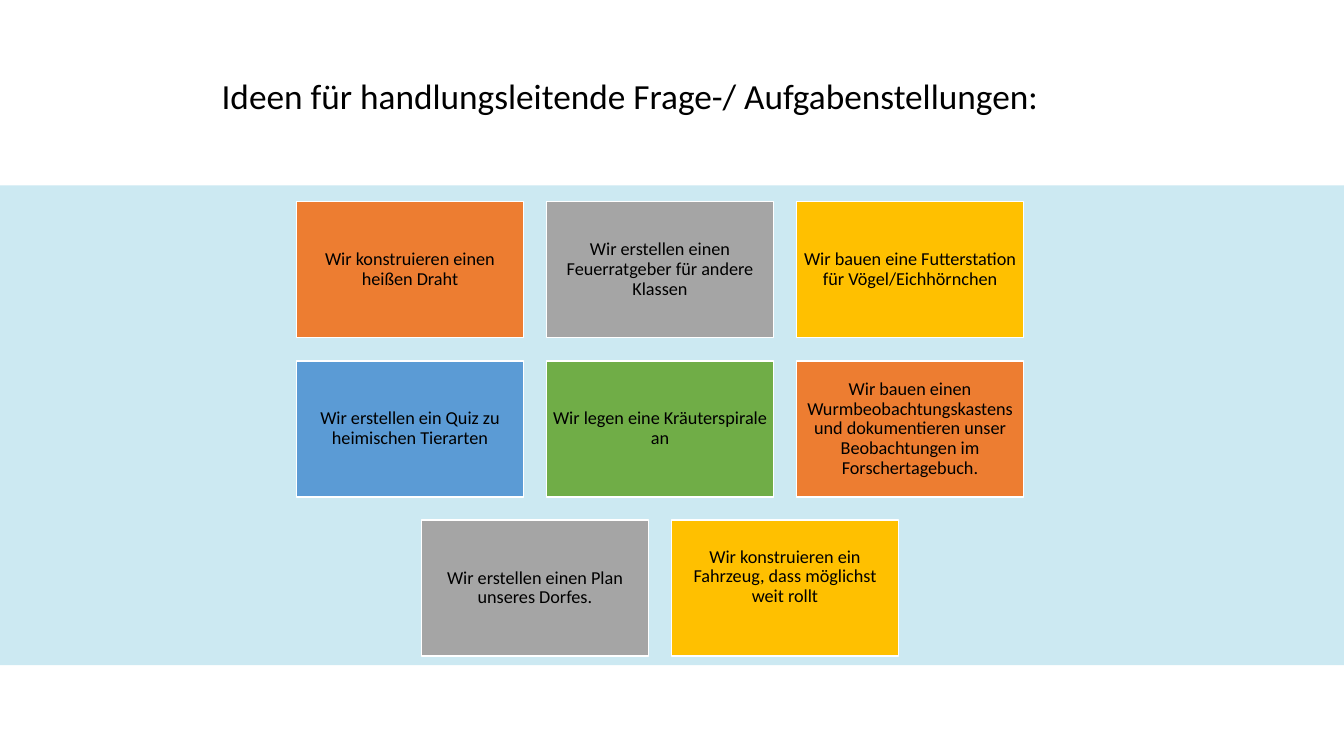
import dataclasses

import pptx
import pptx.dml.color
import pptx.enum.shapes
import pptx.enum.text
import pptx.util

Inch = pptx.util.Inches
Align = pptx.enum.text.PP_ALIGN


@dataclasses.dataclass(frozen=True)
class Theme:
    font: str = "Calibri"
    head: float = 25.2
    body: float = 13
    ink: str = "000000"
    edge: str = "FFFFFF"
    band: str = "CCE9F2"
    orange: str = "ED7D31"
    gray: str = "A5A5A5"
    gold: str = "FFC000"
    blue: str = "5B9BD5"
    green: str = "70AD47"


@dataclasses.dataclass(frozen=True)
class Grid:
    left: float = 2.94
    top: float = 2.0
    wide: float = 2.25
    high: float = 1.35
    gap: float = 0.23
    cols: int = 3

    def place(self, row, col, count):
        shift = (self.cols - count) / 2
        x = self.left + (col + shift) * (self.wide + self.gap)
        y = self.top + row * (self.high + self.gap)
        return x, y, self.wide, self.high


THEME = Theme()
GRID = Grid()
WIDE, HIGH = 13.33, 7.5
INSET = 0.05
LIFT = 0.22

ROWS = [
    [("Wir konstruieren einen heißen Draht", THEME.orange, 0),
     ("Wir erstellen einen Feuerratgeber für andere Klassen", THEME.gray, 0),
     ("Wir bauen eine Futterstation für Vögel/Eichhörnchen", THEME.gold, 0)],
    [("Wir erstellen ein Quiz zu heimischen Tierarten", THEME.blue, 0),
     ("Wir legen eine Kräuterspirale an", THEME.green, 0),
     ("Wir bauen einen Wurmbeobachtungskastens und dokumentieren unser "
      "Beobachtungen im Forschertagebuch.", THEME.orange, 0)],
    [("Wir erstellen einen Plan unseres Dorfes.", THEME.gray, 0),
     ("Wir konstruieren ein Fahrzeug, dass möglichst weit rollt",
      THEME.gold, LIFT)],
]


def tint(code):
    return pptx.dml.color.RGBColor.from_string(code)


def write(frame, text, size, align):
    frame.word_wrap = True
    frame.vertical_anchor = pptx.enum.text.MSO_ANCHOR.MIDDLE
    frame.text = text
    para = frame.paragraphs[0]
    para.alignment = align
    para.line_spacing = 0.9
    font = para.runs[0].font
    font.name = THEME.font
    font.size = pptx.util.Pt(size)
    font.color.rgb = tint(THEME.ink)


def add_rect(slide, area, fill):
    kind = pptx.enum.shapes.MSO_SHAPE.RECTANGLE
    rect = slide.shapes.add_shape(kind, *map(Inch, area))
    rect.shadow.inherit = False
    rect.fill.solid()
    rect.fill.fore_color.rgb = tint(fill)
    rect.line.fill.background()
    return rect


def add_title(slide, text):
    box = slide.shapes.add_textbox(*map(Inch, (2.1, 0.48, 9.06, 0.98)))
    write(box.text_frame, text, THEME.head, Align.LEFT)


def add_card(slide, area, text, fill, lift):
    card = add_rect(slide, area, fill)
    card.line.color.rgb = tint(THEME.edge)
    card.line.width = pptx.util.Pt(1)
    frame = card.text_frame
    frame.margin_left = frame.margin_right = frame.margin_top = Inch(INSET)
    frame.margin_bottom = Inch(INSET + lift)
    write(frame, text, THEME.body, Align.CENTER)


def main():
    deck = pptx.Presentation()
    deck.slide_width, deck.slide_height = Inch(WIDE), Inch(HIGH)
    slide = deck.slides.add_slide(deck.slide_layouts[6])
    add_rect(slide, (0, 1.84, WIDE, 4.76), THEME.band)
    add_title(slide, "Ideen für handlungsleitende Frage-/ Aufgabenstellungen:")
    for row, cards in enumerate(ROWS):
        for col, (text, fill, lift) in enumerate(cards):
            area = GRID.place(row, col, len(cards))
            add_card(slide, area, text, fill, lift)
    deck.save("out.pptx")


if __name__ == "__main__":
    main()
